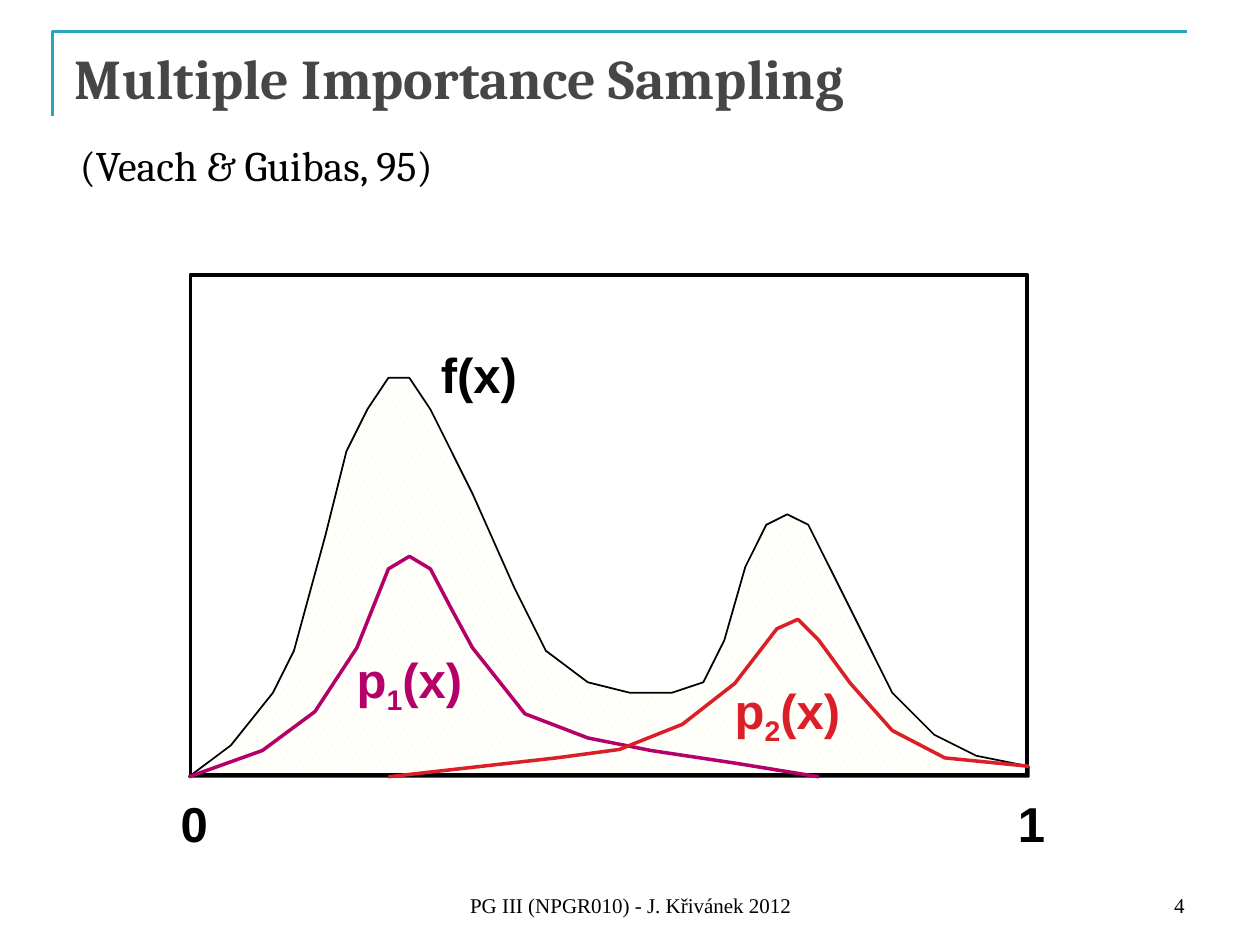
from pptx import Presentation
from pptx import util as u
from pptx.dml.color import RGBColor
from pptx.enum import dml, shapes, text

COLORS = {"accent": "2DA2BF", "title": "464646", "ink": "000000", "paper": "FFFFFF",
          "hatch": "FCFEB9", "p1": "B50069", "p2": "DA1F28"}

# Curve points on a grid 80 units wide, measured up from the baseline
UNITS = 80
F_CURVE = [(4, 3), (8, 8), (10, 12), (13, 23), (15, 31), (17, 35), (19, 38), (21, 38),
           (23, 35), (27, 27), (31, 18), (34, 12), (38, 9), (42, 8), (46, 8), (49, 9),
           (51, 13), (53, 20), (55, 24), (57, 25), (59, 24), (63, 16), (67, 8), (71, 4),
           (75, 2), (80, 1), (80, 0), (0, 0)]
P1_CURVE = [(0, 0), (7, 2.5), (12, 6.2), (16, 12.3), (19, 19.8), (21, 21), (23, 19.8),
            (25, 16), (27, 12.3), (32, 6), (38, 3.7), (44, 2.5), (52, 1.3), (60, 0)]
P2_CURVE = [(80, 1), (72, 1.8), (67, 4.4), (63, 8.9), (60, 13), (58, 15), (56, 14.1),
            (54, 11.5), (52, 8.9), (47, 5), (41, 2.6), (35, 1.8), (27, 0.9), (19, 0)]

TITLE = {"name": "Cambria", "size": u.Pt(32), "bold": True}
CITATION = {"name": "Cambria", "size": u.Pt(24)}
LABEL = {"name": "Arial", "size": u.Pt(28), "bold": True}
FOOTER = {"name": "Times New Roman", "size": u.Pt(12)}


def rgb(color):
    return RGBColor.from_string(COLORS[color])


def add_text(slide, box, parts, style, color="ink", wrap=True, anchor="TOP", align="LEFT"):
    """Place one paragraph; parts at odd positions are subscripts."""
    textbox = slide.shapes.add_textbox(*map(u.Cm, box))
    frame = textbox.text_frame
    settings = {"word_wrap": wrap, "vertical_anchor": getattr(text.MSO_ANCHOR, anchor),
                "auto_size": text.MSO_AUTO_SIZE.NONE if wrap
                else text.MSO_AUTO_SIZE.SHAPE_TO_FIT_TEXT}
    for name, value in settings.items():
        setattr(frame, name, value)
    paragraph = frame.paragraphs[0]
    paragraph.alignment = getattr(text.PP_ALIGN, align)
    for index, part in enumerate(parts):
        run = paragraph.add_run()
        run.text = part
        for name, value in style.items():
            setattr(run.font, name, value)
        run.font.color.rgb = rgb(color)
        if index % 2:
            run._r.get_or_add_rPr().set("baseline", "-25000")


def outline(shape, color, weight):
    shape.shadow.inherit = False
    shape.fill.background()
    shape.line.color.rgb = rgb(color)
    shape.line.width = u.Pt(weight)


def add_path(slide, points, color, weight, close=False):
    """Draw straight segments through points given in cm."""
    start, *rest = [(u.Cm(x), u.Cm(y)) for x, y in points]
    builder = slide.shapes.build_freeform(*start)
    builder.add_line_segments(rest, close=close)
    path = builder.convert_to_shape()
    outline(path, color, weight)
    return path


def add_header(slide, left, top, width, height):
    add_path(slide, [(left, top + height), (left, top), (left + width, top)], "accent", 1.5)
    add_text(slide, (left + 0.2, top + 0.13, width, 3.18),
             ["Multiple Importance Sampling"], TITLE, "title")
    add_text(slide, (left + 0.3, top + 2.06, 8.48, 1.27),
             ["(Veach & Guibas, 95)"], CITATION, wrap=False)


def add_plot(slide, left, top, width, height):
    unit = width / UNITS

    def scaled(curve):
        return [(left + x * unit, top + height - y * unit) for x, y in curve]

    integrand = add_path(slide, scaled(F_CURVE), "ink", 1, close=True)
    integrand.fill.patterned()
    integrand.fill.pattern = dml.MSO_PATTERN.LARGE_CONFETTI
    integrand.fill.fore_color.rgb = rgb("hatch")
    integrand.fill.back_color.rgb = rgb("paper")

    frame = slide.shapes.add_shape(
        shapes.MSO_SHAPE.RECTANGLE,
        *map(u.Cm, (left + 0.03, top, width - 0.06, height - 0.04)))
    outline(frame, "ink", 2)

    for curve, color in ((P1_CURVE, "p1"), (P2_CURVE, "p2")):
        add_path(slide, scaled(curve), color, 2)

    labels = [(4.83, 1.28, 2.15, ["f(x)"], "ink"),
              (-0.42, height + 0.22, 1.06, ["0"], "ink"),
              (width - 0.47, height + 0.22, 1.06, ["1"], "ink"),
              (3.13, 7.42, 2.75, ["p", "1", "(x)"], "p1"),
              (10.75, 8.05, 2.75, ["p", "2", "(x)"], "p2")]
    for x, y, label_width, parts, color in labels:
        add_text(slide, (left + x, top + y, label_width, 1.42), parts, LABEL, color, wrap=False)


def add_footer(slide, left, top, width, height):
    number_width = 5.92
    add_text(slide, (left, top, 8.05, height), ["PG III (NPGR010) - J. Křivánek 2012"],
             FOOTER, anchor="BOTTOM", align="CENTER")
    add_text(slide, (left + width - number_width, top, number_width, height), ["4"],
             FOOTER, anchor="BOTTOM", align="RIGHT")


def main():
    deck = Presentation()
    deck.slide_width, deck.slide_height = u.Cm(25.4), u.Cm(19.05)
    slide = deck.slides.add_slide(deck.slide_layouts[6])
    add_header(slide, 1.06, 0.63, 22.86, 1.7)
    add_plot(slide, 3.81, 5.54, 16.93, 10.12)
    add_footer(slide, 8.69, 17.35, 15.44, 1.27)
    deck.save("out.pptx")


if __name__ == "__main__":
    main()
